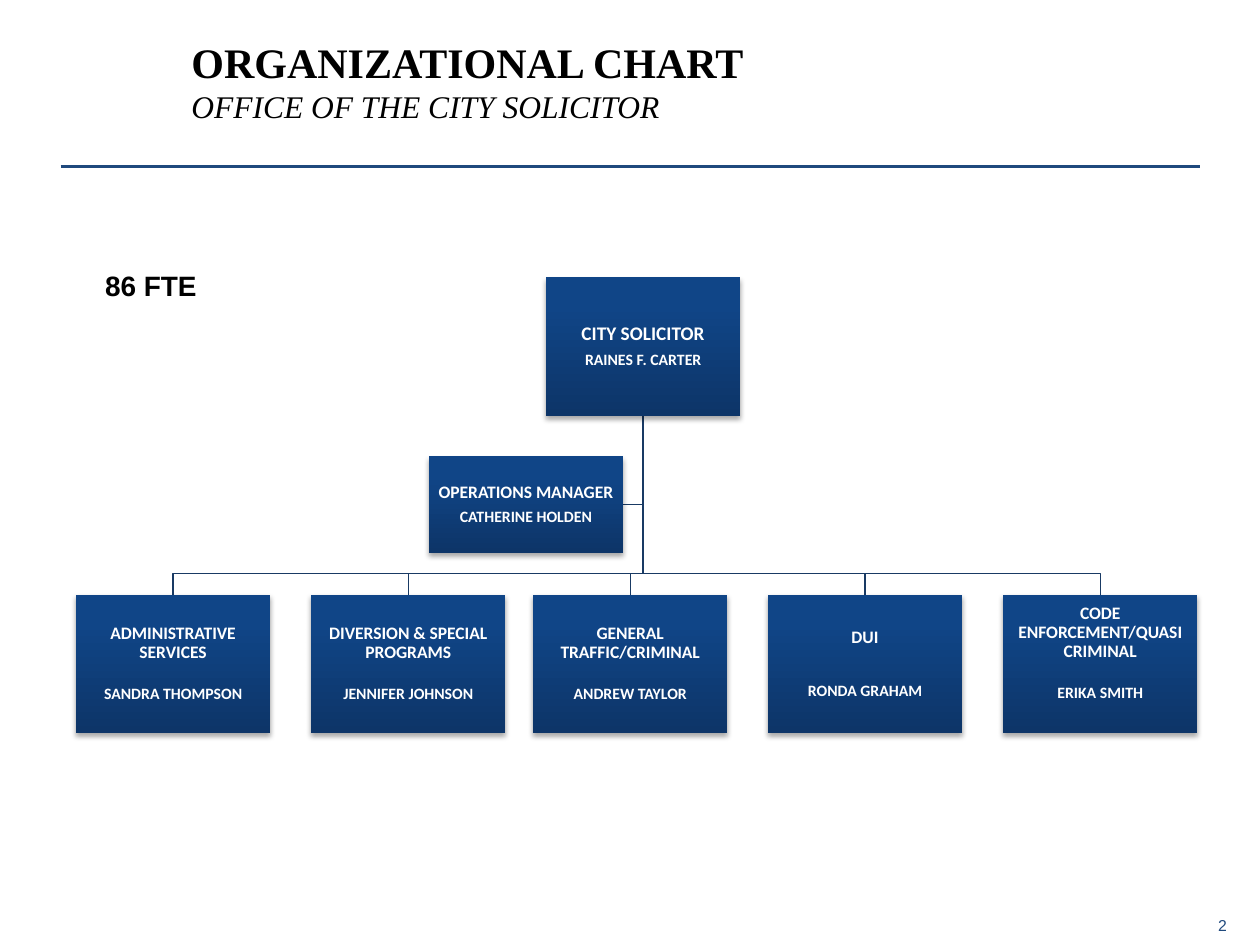
from lxml.etree import SubElement
from pptx import Presentation
from pptx.dml.color import RGBColor
from pptx.enum.shapes import MSO_CONNECTOR, MSO_SHAPE
from pptx.enum.text import MSO_ANCHOR, PP_ALIGN
from pptx.oxml.ns import qn
from pptx.util import Pt

COLORS = {
    "accent": "1F497D",
    "branch": "193A64",
    "box_bottom": "0D3568",
    "box_top": "104587",
    "white": "FFFFFF",
    "black": "000000",
}
BOX_WIDTH, BOX_HEIGHT = 111, 79
STAFF_TOP, BUS_TOP = 340, 327.6
HEAD_LEFT, HEAD_TOP = 312, 158.5
MANAGER_LEFT, MANAGER_TOP, MANAGER_HEIGHT = 245, 260.8, 55
DIVISIONS = [
    (43.4, "ADMINISTRATIVE SERVICES", "SANDRA THOMPSON", 13.5, 0.75),
    (177.8, "DIVERSION & SPECIAL PROGRAMS", "JENNIFER JOHNSON", 13.5, 0.75),
    (304.6, "GENERAL TRAFFIC/CRIMINAL", "ANDREW TAYLOR", 13.5, 0.75),
    (438.8, "DUI", "RONDA GRAHAM", 20, 0.75),
    (573.2, "CODE ENFORCEMENT/QUASI CRIMINAL", "ERIKA SMITH", 13.5, 12.75),
]


def color(name):
    return RGBColor.from_string(COLORS[name])


def style(span, font, size, color_name, bold=False, italic=False):
    span.font.name = font
    span.font.size = Pt(size)
    span.font.bold = bold
    span.font.italic = italic
    span.font.color.rgb = color(color_name)


def set_insets(frame, left, top, right, bottom):
    frame.margin_left, frame.margin_top = Pt(left), Pt(top)
    frame.margin_right, frame.margin_bottom = Pt(right), Pt(bottom)


def add_title(page, heading, subheading):
    title = page.shapes.title
    title.left, title.top, title.width, title.height = Pt(98.6), Pt(18), Pt(585.4), Pt(56.2)
    frame = title.text_frame
    frame.text = f"{heading}\v{subheading}"
    frame.vertical_anchor = MSO_ANCHOR.MIDDLE
    set_insets(frame, 10.8, 3.6, 7.2, 3.6)
    para = frame.paragraphs[0]
    para.alignment = PP_ALIGN.LEFT
    style(para.runs[0], "Times New Roman", 24, "black", bold=True)
    style(para.runs[1], "Times New Roman", 18, "black", italic=True)


def add_rule(page):
    rule = page.shapes.add_connector(MSO_CONNECTOR.STRAIGHT, Pt(34.6), Pt(95), Pt(686), Pt(95))
    rule.line.color.rgb = color("accent")
    rule.line.width = Pt(1.5)
    SubElement(rule._element.spPr, qn("a:effectLst"))


def add_label(page, text, left, top, width, height, size, color_name, bold=False, wrap=True):
    box = page.shapes.add_textbox(Pt(left), Pt(top), Pt(width), Pt(height))
    box.text_frame.word_wrap = wrap
    box.text_frame.text = text
    style(box.text_frame.paragraphs[0].runs[0], "Arial", size, color_name, bold)


def add_branch(page, points):
    start, *rest = [(Pt(x), Pt(y)) for x, y in points]
    builder = page.shapes.build_freeform(*start, scale=1.0)
    builder.add_line_segments(rest, close=False)
    branch = builder.convert_to_shape()
    branch.shadow.inherit = False
    branch.fill.background()
    branch.line.color.rgb = color("branch")
    branch.line.width = Pt(0.75)


def add_shadow(shape):
    shape.shadow.inherit = False
    effects = shape._element.spPr.find(qn("a:effectLst"))
    shadow = SubElement(effects, qn("a:outerShdw"), blurRad=str(Pt(3.1)), dist=str(Pt(1.8)),
                        dir="5400000", rotWithShape="0")
    shade = SubElement(shadow, qn("a:srgbClr"), val=COLORS["black"])
    SubElement(shade, qn("a:alpha"), val="35000")


def add_position(page, left, top, height, role, name, role_size=10, gap=4, bottom=0.75):
    box = page.shapes.add_shape(MSO_SHAPE.RECTANGLE, Pt(left), Pt(top), Pt(BOX_WIDTH), Pt(height))
    box.fill.gradient()
    box.fill.gradient_angle = 90
    stops = zip(box.fill.gradient_stops, ("box_bottom", "box_top"), (0, 0.8))
    for stop, color_name, position in stops:
        stop.color.rgb = color(color_name)
        stop.position = position
    box.line.fill.background()
    add_shadow(box)
    frame = box.text_frame
    frame.word_wrap = True
    frame.vertical_anchor = MSO_ANCHOR.MIDDLE
    set_insets(frame, 0.75, 0.75, 0.75, bottom)
    frame.text = f"{role}\n{name}"
    for para, size in zip(frame.paragraphs, (role_size, 9)):
        para.alignment = PP_ALIGN.CENTER
        para.line_spacing = 0.9
        style(para.runs[0], "Calibri", size, "white", bold=True)
    frame.paragraphs[0].space_after = Pt(gap)


def add_chart_tree(page):
    trunk = HEAD_LEFT + BOX_WIDTH / 2
    root = (trunk, HEAD_TOP + BOX_HEIGHT)
    manager_middle = MANAGER_TOP + MANAGER_HEIGHT / 2
    add_branch(page, [root, (trunk, manager_middle), (MANAGER_LEFT + BOX_WIDTH, manager_middle)])
    for left, *_ in DIVISIONS:
        middle = left + BOX_WIDTH / 2
        add_branch(page, [root, (trunk, BUS_TOP), (middle, BUS_TOP), (middle, STAFF_TOP)])
    add_position(page, HEAD_LEFT, HEAD_TOP, BOX_HEIGHT, "CITY SOLICITOR", "RAINES F. CARTER", 11)
    for left, role, name, gap, bottom in DIVISIONS:
        add_position(page, left, STAFF_TOP, BOX_HEIGHT, role, name, gap=gap, bottom=bottom)
    add_position(page, MANAGER_LEFT, MANAGER_TOP, MANAGER_HEIGHT,
                 "OPERATIONS MANAGER", "CATHERINE HOLDEN")


def main():
    deck = Presentation()
    deck.slide_width, deck.slide_height = Pt(720), Pt(540)
    page = deck.slides.add_slide(deck.slide_layouts[5])
    add_label(page, "2", 689, 519.8, 23.8, 17.3, 9, "accent", wrap=False)
    add_rule(page)
    add_title(page, "ORGANIZATIONAL CHART", "OFFICE OF THE CITY SOLICITOR")
    add_chart_tree(page)
    add_label(page, "86 FTE", 53, 149.8, 124, 26.6, 16, "black", bold=True)
    deck.save("out.pptx")


if __name__ == "__main__":
    main()
